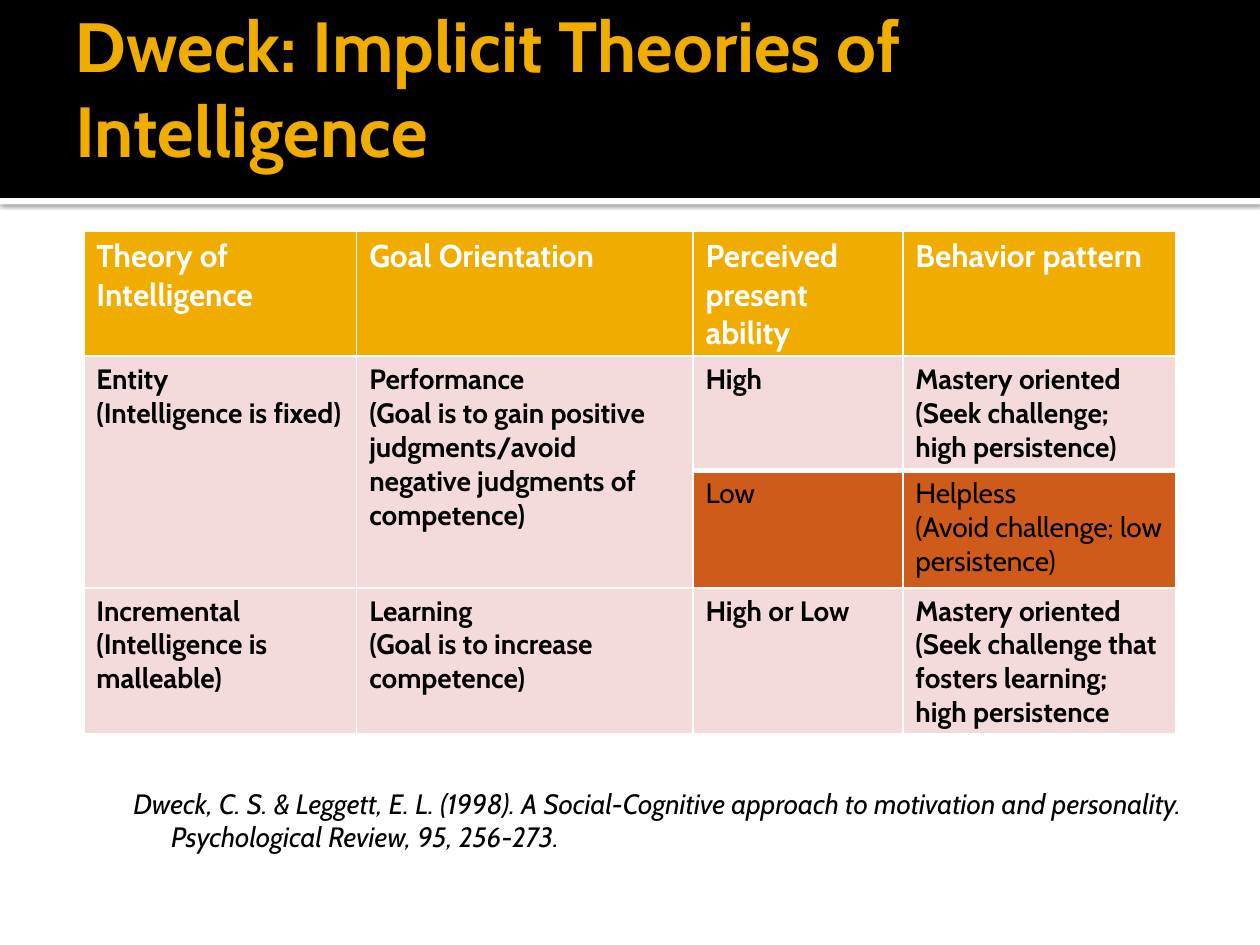
"""Build the slide on Dweck's implicit theories of intelligence."""
from dataclasses import dataclass

from lxml import etree
from pptx import Presentation
from pptx.dml.color import RGBColor
from pptx.enum.shapes import MSO_SHAPE
from pptx.enum.text import MSO_ANCHOR, PP_ALIGN
from pptx.oxml import parse_xml
from pptx.oxml.ns import nsdecls, qn
from pptx.util import Cm, Pt

RECTANGLE = MSO_SHAPE.RECTANGLE
MIDDLE = MSO_ANCHOR.MIDDLE
LEFT = PP_ALIGN.LEFT

BLACK = RGBColor(0x00, 0x00, 0x00)
WHITE = RGBColor(0xFF, 0xFF, 0xFF)
GOLD = RGBColor(0xF0, 0xAD, 0x00)
PINK = RGBColor(0xF4, 0xDA, 0xDA)
RUST = RGBColor(0xCF, 0x5B, 0x1B)

COLUMN_WIDTHS = (5.5, 6.78, 4.23, 5.5)
GRID_LEFT = 1.69


@dataclass(frozen=True)
class Style:
    size: float
    color: RGBColor
    bold: bool = False
    italic: bool = False
    font: str = "Cabin"


@dataclass(frozen=True)
class Entry:
    lines: tuple[str, ...]
    style: Style
    fill: RGBColor
    bottom_border: float = 3


@dataclass(frozen=True)
class Block:
    top: float
    row_heights: tuple[float, ...]
    rows: tuple[tuple[Entry, ...], ...]
    merged_columns: tuple[int, ...] = ()


HEADING = Style(18, WHITE, bold=True)
STRONG = Style(16, BLACK, bold=True)
PLAIN = Style(16, BLACK)
CITATION = Style(16, BLACK, italic=True)
TITLE = Style(40.5, GOLD, bold=True)
TITLE_INITIAL = Style(40.5, GOLD, bold=True, font="Arial")


def heading(*lines: str) -> Entry:
    return Entry(lines, HEADING, GOLD)


def mastery(*lines: str) -> Entry:
    return Entry(lines, STRONG, PINK)


def helpless(*lines: str) -> Entry:
    return Entry(lines, PLAIN, RUST, bottom_border=1)


BLOCKS = (
    Block(4.66, (2.53,), ((
        heading("Theory of Intelligence"),
        heading("Goal Orientation"),
        heading("Perceived present ability"),
        heading("Behavior pattern"),
    ),)),
    Block(7.19, (2.29, 2.36), (
        (
            mastery("Entity", "(Intelligence is fixed)"),
            mastery("Performance", "(Goal is to gain positive judgments/avoid "
                    "negative judgments of competence)"),
            mastery("High"),
            mastery("Mastery oriented", "(Seek challenge; high persistence)"),
        ),
        (
            mastery(),
            mastery(),
            helpless("Low"),
            helpless("Helpless", "(Avoid challenge; low persistence)"),
        ),
    ), merged_columns=(0, 1)),
    Block(11.85, (2.97,), ((
        mastery("Incremental", "(Intelligence is malleable)"),
        mastery("Learning", "(Goal is to increase competence)"),
        mastery("High or Low"),
        mastery("Mastery oriented",
                "(Seek challenge that fosters learning; high persistence"),
    ),)),
)


def add_run(paragraph, text: str, style: Style) -> None:
    run = paragraph.add_run()
    run.text = text
    run.font.name = style.font
    run.font.size = Pt(style.size)
    run.font.bold = style.bold
    run.font.italic = style.italic
    run.font.color.rgb = style.color


def add_band(slide, top: float, height: float, color: RGBColor):
    band = slide.shapes.add_shape(RECTANGLE, 0, Cm(top), Cm(25.4), Cm(height))
    band.shadow.inherit = False
    band.fill.solid()
    band.fill.fore_color.rgb = color
    band.line.fill.background()
    return band


def cast_shadow(band) -> None:
    effects = band._element.spPr.find(qn("a:effectLst"))
    effects.append(parse_xml(
        f'<a:outerShdw {nsdecls("a")} blurRad="{Pt(2.5)}" dist="{Pt(0.8)}" '
        'dir="5400000" algn="t" rotWithShape="0"><a:srgbClr val="000000">'
        '<a:alpha val="60000"/></a:srgbClr></a:outerShdw>'))


def add_text_frame(slide, left: float, top: float, width: float, height: float,
                   insets: tuple[float, float, float, float]):
    frame = slide.shapes.add_textbox(Cm(left), Cm(top), Cm(width), Cm(height)).text_frame
    frame.word_wrap = True
    (frame.margin_left, frame.margin_top,
     frame.margin_right, frame.margin_bottom) = map(Cm, insets)
    frame.paragraphs[0].alignment = LEFT
    return frame


def draw_entry(cell, entry: Entry) -> None:
    properties = cell._tc.get_or_add_tcPr()
    for side, width in (("L", 1), ("R", 1), ("T", 1), ("B", entry.bottom_border)):
        border = etree.SubElement(properties, qn(f"a:ln{side}"), w=str(Pt(width)))
        fill = etree.SubElement(border, qn("a:solidFill"))
        etree.SubElement(fill, qn("a:srgbClr"), val=str(WHITE))
    cell.fill.solid()
    cell.fill.fore_color.rgb = entry.fill
    frame = cell.text_frame
    for index, line in enumerate(entry.lines):
        paragraph = frame.add_paragraph() if index else frame.paragraphs[0]
        add_run(paragraph, line, entry.style)


def draw_block(slide, block: Block) -> None:
    grid = slide.shapes.add_table(
        len(block.rows), len(COLUMN_WIDTHS), Cm(GRID_LEFT), Cm(block.top),
        Cm(sum(COLUMN_WIDTHS)), Cm(sum(block.row_heights))).table
    grid.first_row = grid.horz_banding = False
    for column, width in zip(grid.columns, COLUMN_WIDTHS):
        column.width = Cm(width)
    for row, height, entries in zip(grid.rows, block.row_heights, block.rows):
        row.height = Cm(height)
        for cell, entry in zip(row.cells, entries):
            draw_entry(cell, entry)
    for column in block.merged_columns:
        grid.cell(0, column).merge(grid.cell(len(block.rows) - 1, column))


def main() -> None:
    presentation = Presentation()
    presentation.slide_width, presentation.slide_height = Cm(25.4), Cm(19.05)
    slide = presentation.slides.add_slide(presentation.slide_layouts[6])

    cast_shadow(add_band(slide, 3.99, 0.13, WHITE))
    add_band(slide, 0, 3.99, BLACK)

    title = add_text_frame(slide, 1.27, 0, 23.75, 3.48, (0.25, 0.13, 0.13, 0.13))
    title.vertical_anchor = MIDDLE
    add_run(title.paragraphs[0], "D", TITLE_INITIAL)
    add_run(title.paragraphs[0], "weck: Implicit Theories of Intelligence", TITLE)

    citation = add_text_frame(slide, 1.27, 15.6, 22.86, 2.54, (0.15, 0.25, 0.25, 0.13))
    hanging = citation.paragraphs[0]._p.get_or_add_pPr()
    hanging.set("marL", str(Cm(2.03)))
    hanging.set("indent", str(Cm(-0.76)))
    add_run(citation.paragraphs[0],
            "Dweck, C. S. & Leggett, E. L. (1998). A Social-Cognitive approach to "
            "motivation and personality. Psychological Review, 95, 256-273.", CITATION)

    for block in BLOCKS:
        draw_block(slide, block)
    presentation.save("out.pptx")


if __name__ == "__main__":
    main()
